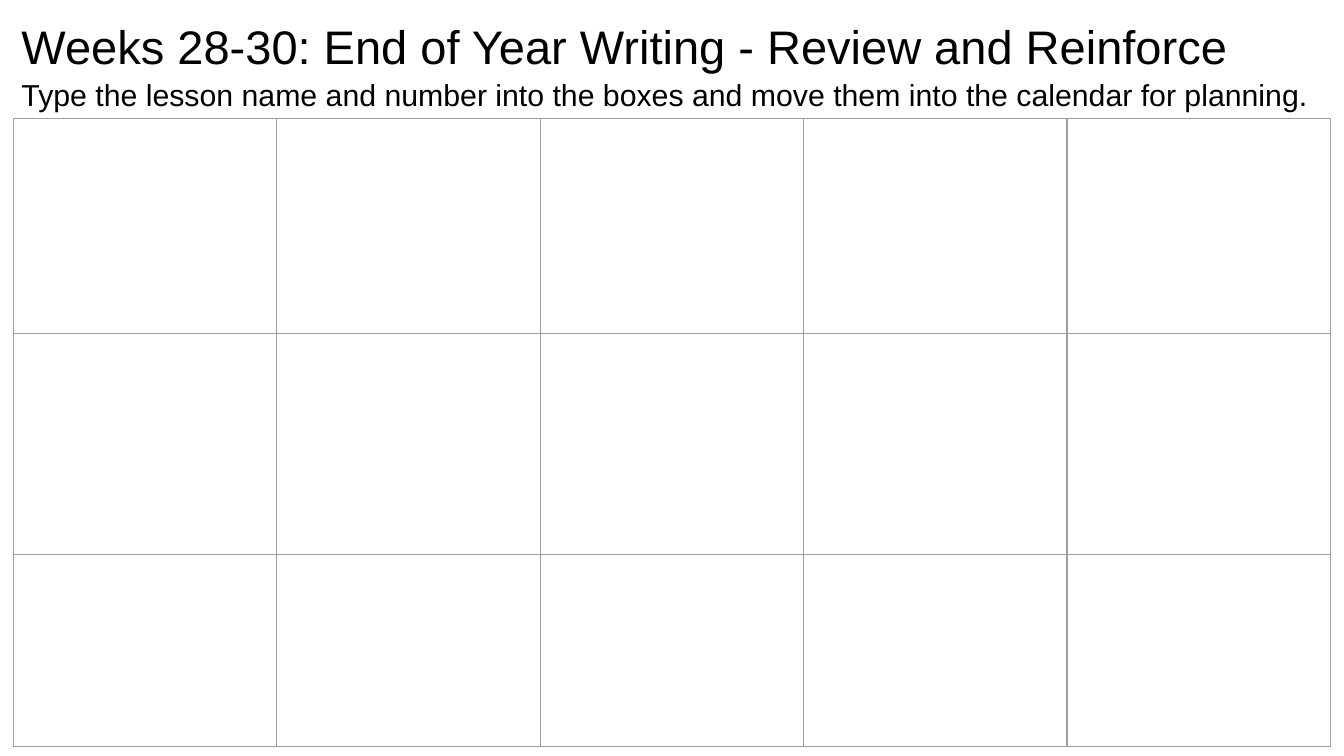
from dataclasses import dataclass

from lxml import etree
from pptx import Presentation
from pptx.dml import color
from pptx.enum import text
from pptx.oxml import ns
from pptx.util import Pt


@dataclass(frozen=True)
class Theme:
    font: str = "Arial"
    ink: str = "000000"
    grid: str = "9E9E9E"
    grid_width: float = 0.75
    title_size: float = 25.2
    hint_size: float = 16.2


@dataclass(frozen=True)
class Line:
    words: str
    size: float
    space_before: float = 0


@dataclass(frozen=True)
class Calendar:
    left: float
    top: float
    days: int
    day_width: float
    week_heights: tuple[float, ...]


THEME = Theme()
HEADING = (
    Line("Weeks 28-30: End of Year Writing - Review and Reinforce", THEME.title_size),
    Line(
        "Type the lesson name and number into the boxes and move them into the calendar for planning.",
        THEME.hint_size,
        1,
    ),
)
CALENDAR = Calendar(7.2, 63.6, 5, 141.12, (115.2, 118.08, 102.96))


def fill_heading(sp, lines: tuple[Line, ...]) -> None:
    sp.left, sp.top, sp.width, sp.height = Pt(4.32), Pt(0), Pt(712.08), Pt(45.36)
    tf = sp.text_frame
    tf.word_wrap = True
    tf.auto_size = text.MSO_AUTO_SIZE.NONE
    tf.vertical_anchor = text.MSO_ANCHOR.TOP
    tf.margin_left = tf.margin_right = tf.margin_bottom = Pt(7.2)
    tf.margin_top = Pt(9.5)
    for i, line in enumerate(lines):
        p = tf.paragraphs[0] if i == 0 else tf.add_paragraph()
        p.alignment = text.PP_ALIGN.LEFT
        p.line_spacing = 1.0
        p.space_before = Pt(line.space_before)
        r = p.add_run()
        r.text = line.words
        r.font.name = THEME.font
        r.font.size = Pt(line.size)
        r.font.color.rgb = color.RGBColor.from_string(THEME.ink)


def outline_cell(cell) -> None:
    tc_pr = cell._tc.get_or_add_tcPr()
    for side in ("a:lnL", "a:lnR", "a:lnT", "a:lnB"):
        ln = etree.SubElement(tc_pr, ns.qn(side), w=str(Pt(THEME.grid_width)))
        fill = etree.SubElement(ln, ns.qn("a:solidFill"))
        etree.SubElement(fill, ns.qn("a:srgbClr"), val=THEME.grid)
    cell.fill.background()


def add_calendar(s, cal: Calendar) -> None:
    table = s.shapes.add_table(
        len(cal.week_heights),
        cal.days,
        Pt(cal.left),
        Pt(cal.top),
        Pt(cal.days * cal.day_width),
        Pt(sum(cal.week_heights)),
    ).table
    table.first_row = table.horz_banding = False
    for column in table.columns:
        column.width = Pt(cal.day_width)
    for row, height in zip(table.rows, cal.week_heights):
        row.height = Pt(height)
    for cell in table.iter_cells():
        outline_cell(cell)


def main() -> None:
    prs = Presentation()
    prs.slide_width, prs.slide_height = Pt(720), Pt(405)
    s = prs.slides.add_slide(prs.slide_layouts[5])
    add_calendar(s, CALENDAR)
    fill_heading(s.shapes.title, HEADING)
    prs.save("out.pptx")


if __name__ == "__main__":
    main()
